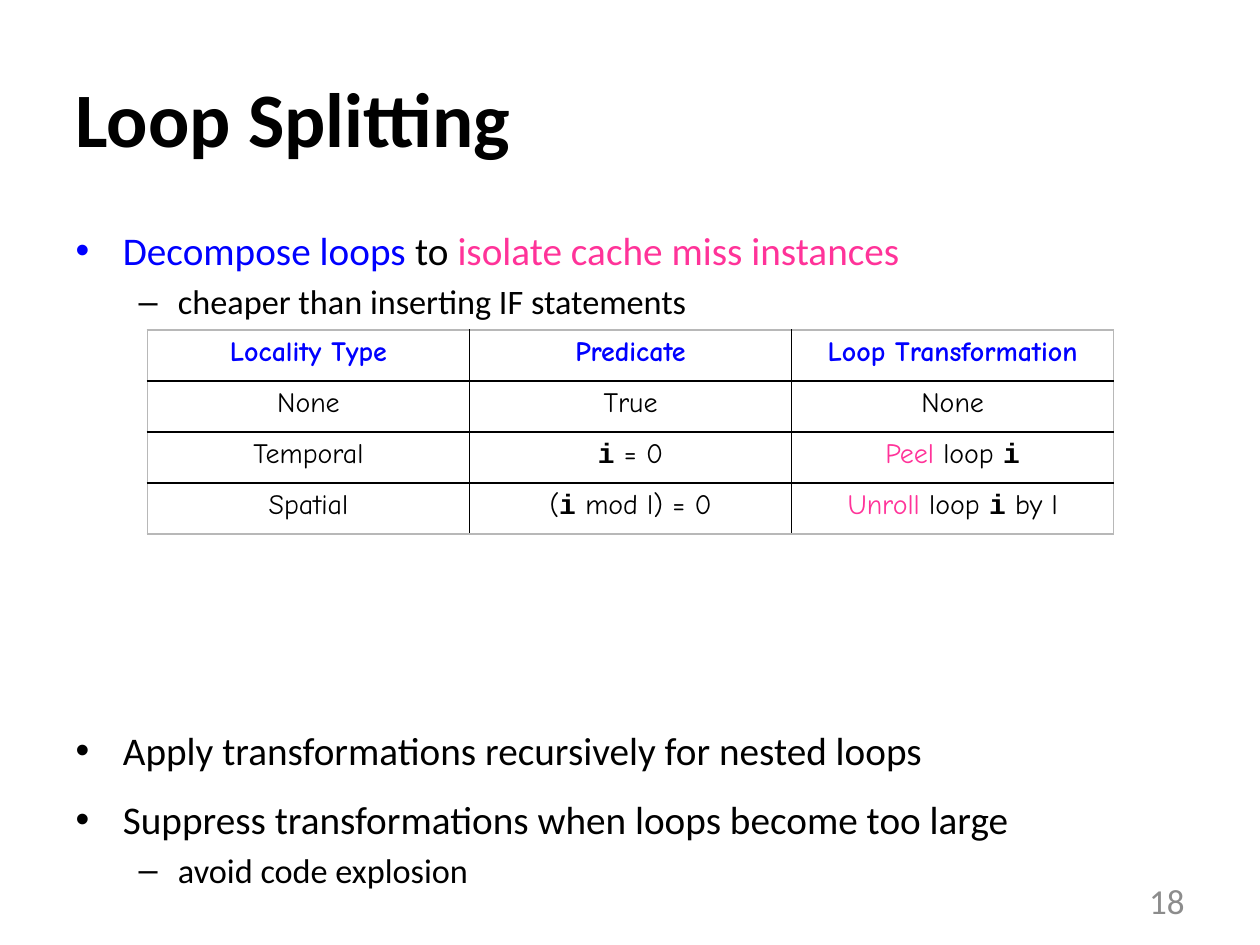
from lxml import etree
from pptx import Presentation, util as u
from pptx.dml.color import RGBColor
from pptx.enum import text
from pptx.oxml.ns import qn

BLACK, BLUE, PINK, GREY, EDGE = "000000", "0000FF", "FF3399", "8C8C8C", "B8B8B8"
TITLE_BOX = (0.5, 0.3, 9, 1.25)
BODY_BOX = (0.5, 1.75, 9, 4.95)
NUMBER_BOX = (7.17, 6.95, 2.33, 0.4)
TABLE_BOX = (1.17, 2.62, 7.67, 1.62)

BULLETS = [
    (0, [("Decompose loops", BLUE), (" to ", BLACK),
         ("isolate cache miss instances", PINK)]),
    (1, [("cheaper than inserting IF statements", BLACK)]),
    (0, [("Apply transformations recursively for nested loops", BLACK)]),
    (0, [("Suppress transformations when loops become too large", BLACK)]),
    (1, [("avoid code explosion", BLACK)]),
]
BULLET_SIZES = (22.4, 19.6)
TABLE_GAP = 223
LOOSE_ROWS = (2, 3)

INDEX = ("i", BLACK, "Courier New", True)


def plain(words, colour=BLACK):
    return (words, colour, "Comic Neue", False)


def heading(words):
    return (words, BLUE, "Comic Neue", True)


ROWS = [
    [[heading("Locality Type")], [heading("Predicate")],
     [heading("Loop Transformation")]],
    [[plain("None")], [plain("True")], [plain("None")]],
    [[plain("Temporal")], [INDEX, plain(" = 0")],
     [plain("Peel", PINK), plain(" loop "), INDEX]],
    [[plain("Spatial")], [plain("("), INDEX, plain(" mod l) = 0")],
     [plain("Unroll", PINK), plain(" loop "), INDEX, plain(" by l")]],
]


def rgb(colour):
    return RGBColor.from_string(colour)


def inches(box):
    return [u.Inches(length) for length in box]


def place(shape, box):
    shape.left, shape.top, shape.width, shape.height = inches(box)


def add_span(para, words, size, colour, font="Calibri", bold=False):
    span = para.add_run()
    span.text = words
    span.font.size = u.Pt(size)
    span.font.name = font
    span.font.bold = bold
    span.font.color.rgb = rgb(colour)


def fill_title(title, box):
    place(title, box)
    title.text_frame.vertical_anchor = text.MSO_ANCHOR.MIDDLE
    title.text_frame.auto_size = text.MSO_AUTO_SIZE.NONE
    para = title.text_frame.paragraphs[0]
    para.alignment = text.PP_ALIGN.LEFT
    add_span(para, "Loop Splitting", 44, BLACK, bold=True)


def fill_body(body, box):
    place(body, box)
    frame = body.text_frame
    frame.auto_size = text.MSO_AUTO_SIZE.NONE
    for number, (level, spans) in enumerate(BULLETS):
        para = frame.add_paragraph() if number else frame.paragraphs[0]
        para.level = level
        for words, colour in spans:
            add_span(para, words, BULLET_SIZES[level], colour)
        if number in LOOSE_ROWS:
            para.line_spacing = 1.3
    frame.paragraphs[LOOSE_ROWS[0]].space_before = u.Pt(TABLE_GAP)


def add_number(page, box):
    frame = page.shapes.add_textbox(*inches(box)).text_frame
    frame.word_wrap = True
    frame.vertical_anchor = text.MSO_ANCHOR.MIDDLE
    para = frame.paragraphs[0]
    para.alignment = text.PP_ALIGN.RIGHT
    add_span(para, "18", 20, GREY)


def set_borders(cell, outer_sides):
    properties = cell._tc.get_or_add_tcPr()
    for position, side in enumerate(("lnL", "lnR", "lnT", "lnB")):
        line = etree.Element(qn("a:" + side), w=str(u.Pt(1)))
        fill = etree.SubElement(line, qn("a:solidFill"))
        colour = EDGE if side in outer_sides else BLACK
        etree.SubElement(fill, qn("a:srgbClr"), val=colour)
        properties.insert(position, line)


def add_locality_table(page, box):
    count, width = len(ROWS), len(ROWS[0])
    table = page.shapes.add_table(count, width, *inches(box)).table
    table.first_row = table.horz_banding = False
    for r, row in enumerate(ROWS):
        for c, spans in enumerate(row):
            cell = table.cell(r, c)
            cell.fill.background()
            edges = {"lnL": c == 0, "lnR": c == width - 1,
                     "lnT": r == 0, "lnB": r == count - 1}
            set_borders(cell, [side for side, outer in edges.items() if outer])
            para = cell.text_frame.paragraphs[0]
            para.alignment = text.PP_ALIGN.CENTER
            for words, colour, font, bold in spans:
                add_span(para, words, 16, colour, font, bold)


def main():
    deck = Presentation()
    deck.slide_width, deck.slide_height = u.Inches(10), u.Inches(7.5)
    page = deck.slides.add_slide(deck.slide_layouts[1])
    fill_title(page.shapes.title, TITLE_BOX)
    fill_body(page.placeholders[1], BODY_BOX)
    add_number(page, NUMBER_BOX)
    add_locality_table(page, TABLE_BOX)
    deck.save("out.pptx")


if __name__ == "__main__":
    main()
